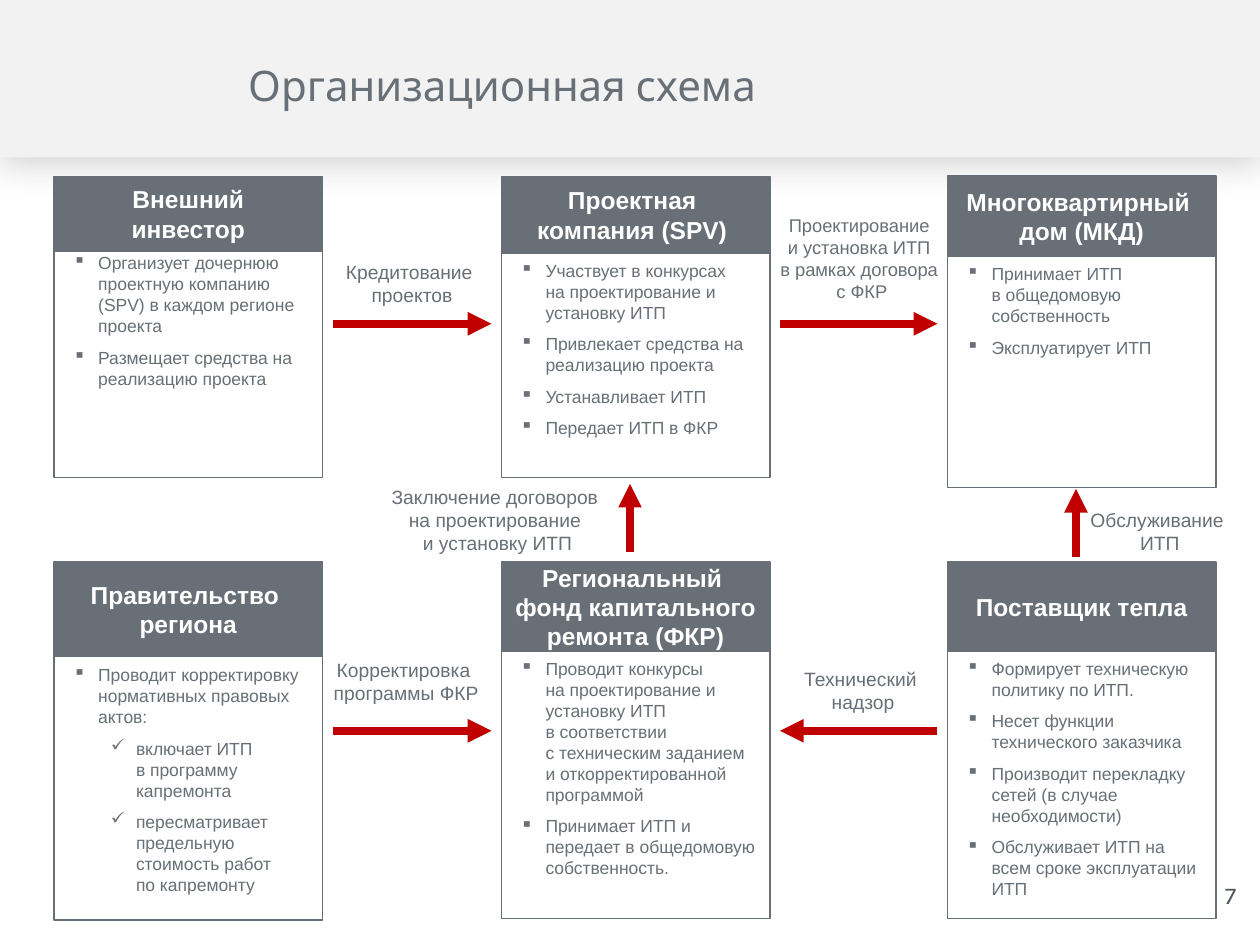
from copy import deepcopy
from dataclasses import dataclass

from lxml import etree
from pptx import Presentation
from pptx import util as u
from pptx.dml.color import RGBColor
from pptx.enum import shapes, text
from pptx.oxml.ns import qn


@dataclass(frozen=True)
class Theme:
    gray: str = "686F76"
    band: str = "F2F2F2"
    white: str = "FFFFFF"
    arrow: str = "C00000"
    number: str = "53585F"
    body_font: str = "Arial"
    title_font: str = "Karla"
    title_size: float = 24
    heading_size: float = 14
    body_size: float = 10
    label_size: float = 11
    number_size: float = 13.8
    inset: float = 0.06


THEME = Theme()
WIDTH, HEIGHT = 10, 7.5

# Grid of cards: left edges of three columns, tops of two rows
CARD_WIDTH = 2.13
COLUMNS = [round(0.43 + 3.545 * i, 2) for i in range(3)]
ROWS = [1.4, 4.46]
GAP = 0.08

CENTER, LEFT, RIGHT = (text.PP_ALIGN.CENTER, text.PP_ALIGN.LEFT, text.PP_ALIGN.RIGHT)
MIDDLE, TOP, BOTTOM = (text.MSO_ANCHOR.MIDDLE, text.MSO_ANCHOR.TOP, text.MSO_ANCHOR.BOTTOM)

# column, row, heading height, body offset, card height, heading, bullets (level, text)
CARDS = [
    (0, 0, 0.59, 0.54, 2.39, ["Внешний\nинвестор"], [
        (0, "Организует дочернюю проектную компанию \n(SPV) в каждом регионе проекта"),
        (0, "Размещает средства на реализацию проекта")]),
    (1, 0, 0.61, 0.6, 2.39, ["Проектная \nкомпания (SPV) "], [
        (0, "Участвует в конкурсах \nна проектирование и установку ИТП"),
        (0, "Привлекает средства на реализацию проекта"),
        (0, "Устанавливает ИТП"),
        (0, "Передает ИТП в ФКР")]),
    (2, 0, 0.63, 0.63, 2.47, ["Многоквартирный \nдом (МКД)"], [
        (0, "Принимает ИТП \nв общедомовую собственность"),
        (0, "Эксплуатирует ИТП")]),
    (0, 1, 0.75, 0.75, 2.84, ["Правительство ", "региона"], [
        (0, "Проводит корректировку нормативных правовых актов:"),
        (1, "включает ИТП \nв программу капремонта"),
        (1, "пересматривает предельную стоимость работ \nпо капремонту")]),
    (1, 1, 0.71, 0.7, 2.83, ["Региональный ", "фонд капитального ремонта (ФКР)"], [
        (0, "Проводит конкурсы \nна проектирование и установку ИТП \nв соответствии \n"
            "с техническим заданием \nи откорректированной программой"),
        (0, "Принимает ИТП и \nпередает в общедомовую собственность.")]),
    (2, 1, 0.71, 0.7, 2.83, ["Поставщик тепла"], [
        (0, "Формирует техническую политику по ИТП."),
        (0, "Несет функции технического заказчика"),
        (0, "Производит перекладку сетей (в случае необходимости)"),
        (0, "Обслуживает ИТП на всем сроке эксплуатации ИТП")]),
]

# box, size, paragraphs
LABELS = [
    ((2.57, 2.01, 1.4, 0.48), 11, ["Кредитование ", "проектов"]),
    ((6.26, 5.24, 1.18, 0.48), 11, ["Технический ", "надзор"]),
    ((2.56, 5.17, 1.33, 0.48), 11, ["Корректировка ", "программы ФКР"]),
    ((5.24, 1.64, 3.2, 0.82), 10.5,
     ["Проектирование \nи установка ИТП ", "в рамках договора ", "с ФКР"]),
    ((2.72, 3.79, 2.46, 0.67), 11,
     ["Заключение договоров \nна проектирование \nи установку ИТП"]),
    ((8.42, 3.98, 1.57, 0.48), 11, ["Обслуживание \nИТП"]),
]


def inches(*values):
    return [u.Inches(value) for value in values]


def set_values(target, values):
    for name, value in values.items():
        setattr(target, name, value)


def set_frame(frame, anchor, insets):
    names = ("margin_left", "margin_top", "margin_right", "margin_bottom")
    set_values(frame, dict(zip(names, inches(*insets)), word_wrap=True, vertical_anchor=anchor))


def write(paragraph, words, size, color, align=LEFT, font=THEME.body_font, bold=False):
    paragraph.text = words
    paragraph.alignment = align
    for run in paragraph.runs:
        set_values(run.font, {"size": u.Pt(size), "name": font, "bold": bold})
        run.font.color.rgb = RGBColor.from_string(color)
    # Line breaks take the same size as the text around them
    for line_break in paragraph._p.findall(qn("a:br")):
        line_break.append(deepcopy(paragraph.runs[0]._r.rPr))


def write_all(frame, lines, *style, **options):
    for index, line in enumerate(lines):
        paragraph = frame.paragraphs[0] if index == 0 else frame.add_paragraph()
        write(paragraph, line, *style, **options)


def add_rectangle(slide, box, fill=None, line=None):
    shape = slide.shapes.add_shape(shapes.MSO_SHAPE.RECTANGLE, *inches(*box))
    shape.shadow.inherit = False
    if fill:
        shape.fill.solid()
        shape.fill.fore_color.rgb = RGBColor.from_string(fill)
    else:
        shape.fill.background()
    if line:
        shape.line.color.rgb = RGBColor.from_string(line)
        shape.line.width = u.Pt(1)
    else:
        shape.line.fill.background()
    return shape


def add_header(slide, box):
    # Band with a soft shadow below, behind the title
    band = add_rectangle(slide, box, THEME.band)
    effects = band._element.spPr.find(qn("a:effectLst"))
    shadow = etree.SubElement(effects, qn("a:outerShdw"), blurRad=str(u.Pt(21)),
                              dist=str(u.Pt(3)), dir="5400000", rotWithShape="0")
    color = etree.SubElement(shadow, qn("a:srgbClr"), val="000000")
    etree.SubElement(color, qn("a:alpha"), val="19000")
    slide.shapes._spTree.insert(2, band._element)

    title = slide.shapes.title
    place = (0.197 * WIDTH, 0.27, 0.735 * WIDTH, 0.8)
    set_values(title, dict(zip(("left", "top", "width", "height"), inches(*place))))
    set_frame(title.text_frame, MIDDLE, (0, 0, 0, 0))
    write(title.text_frame.paragraphs[0], "Организационная схема",
          THEME.title_size, THEME.gray, font=THEME.title_font)


def add_label(slide, box, size, lines):
    label = slide.shapes.add_textbox(*inches(*box))
    set_frame(label.text_frame, MIDDLE, [THEME.inset] * 4)
    write_all(label.text_frame, lines, size, THEME.gray, align=CENTER)


def add_bullet(paragraph, level):
    properties = paragraph._p.get_or_add_pPr()
    properties.set("marL", str(u.Inches(0.29 + 0.3 * level)))
    properties.set("indent", str(u.Inches(-0.2)))
    etree.SubElement(properties, qn("a:buChar"), char="▪✓"[level])
    paragraph.level = level


def add_card(slide, box, heading_height, body_offset, heading, bullets):
    left, top, width, height = box
    # Body with bullets
    body = add_rectangle(slide, (left, top + body_offset, width, height - body_offset),
                         line=THEME.gray)
    set_frame(body.text_frame, TOP, [THEME.inset] * 4)
    write_all(body.text_frame, [words for _, words in bullets], THEME.body_size, THEME.gray)
    for index, (level, _) in enumerate(bullets):
        paragraph = body.text_frame.paragraphs[index]
        add_bullet(paragraph, level)
        paragraph.space_before = u.Pt(6 if index else 0)
    # Heading bar
    bar = add_rectangle(slide, (left, top, width, heading_height), THEME.gray, THEME.gray)
    set_frame(bar.text_frame, MIDDLE, [THEME.inset] * 4)
    write_all(bar.text_frame, heading, THEME.heading_size, THEME.white, align=CENTER, bold=True)


def add_arrow(slide, tip, tail):
    arrow = slide.shapes.add_connector(shapes.MSO_CONNECTOR.STRAIGHT, *inches(*tip, *tail))
    arrow.line.color.rgb = RGBColor.from_string(THEME.arrow)
    arrow.line.width = u.Pt(4.5)
    etree.SubElement(arrow.line._get_or_add_ln(), qn("a:headEnd"), type="triangle")
    etree.SubElement(arrow._element.spPr, qn("a:effectLst"))


def add_flows(slide):
    # Gaps between the columns hold the horizontal arrows
    gaps = [(left + CARD_WIDTH + GAP, following - GAP)
            for left, following in zip(COLUMNS, COLUMNS[1:])]
    for (start, end), y, forward in ((gaps[0], 2.57, True), (gaps[1], 2.57, True),
                                     (gaps[0], 5.8, True), (gaps[1], 5.8, False)):
        tip, tail = (end, start) if forward else (start, end)
        add_arrow(slide, (tip, y), (tail, y))
    # Upward arrows between the rows
    for x, y in ((5, 3.84), (8.54, 3.88)):
        add_arrow(slide, (x, y), (x, y + 0.54))


def add_number(slide, box):
    number = slide.shapes.add_textbox(*inches(*box))
    set_frame(number.text_frame, BOTTOM, (0, 0, 0, 0.02))
    write(number.text_frame.paragraphs[0], "7", THEME.number_size, THEME.number,
          align=RIGHT, font=THEME.title_font)


def main():
    presentation = Presentation()
    presentation.slide_width, presentation.slide_height = inches(WIDTH, HEIGHT)
    slide = presentation.slides.add_slide(presentation.slide_layouts[5])
    add_header(slide, (-0.01, -0.01, WIDTH + 0.02, 1.26))
    for box, size, lines in LABELS:
        add_label(slide, box, size, lines)
    for column, row, heading_height, body_offset, height, heading, bullets in CARDS:
        box = (COLUMNS[column], ROWS[row], CARD_WIDTH, height)
        add_card(slide, box, heading_height, body_offset, heading, bullets)
    add_flows(slide)
    add_number(slide, (9.32, 7.02, 0.49, 0.22))
    presentation.save("out.pptx")


if __name__ == "__main__":
    main()
